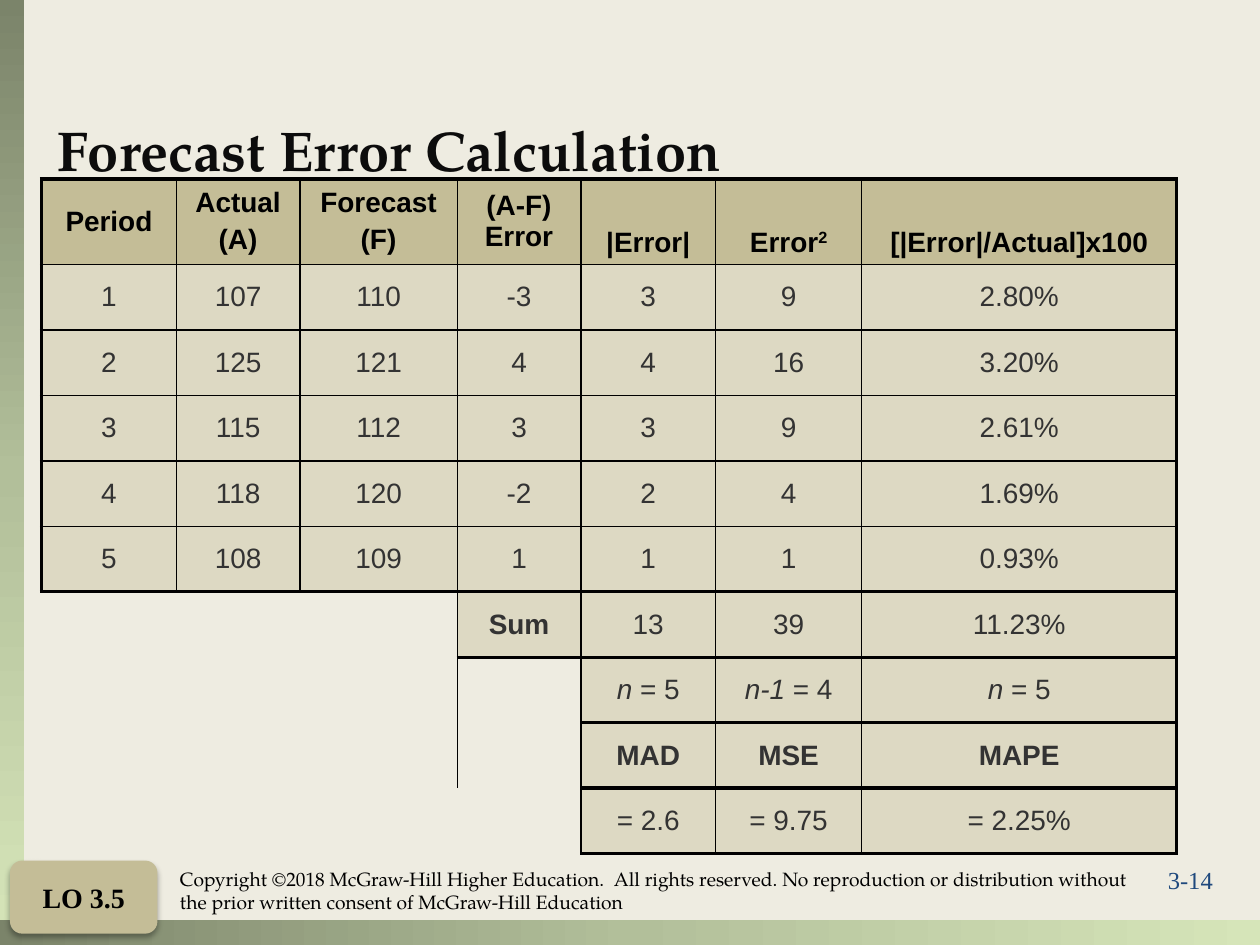
from dataclasses import dataclass

from lxml.etree import SubElement
from pptx import Presentation
from pptx.dml.color import RGBColor
from pptx.enum.shapes import MSO_SHAPE as Preset
from pptx.enum.text import MSO_ANCHOR as Anchor, PP_ALIGN as Align
from pptx.oxml.ns import qn
from pptx.util import Inches, Pt


@dataclass(frozen=True)
class Theme:
    """Colours, fonts and sizes of the slide."""
    background: str = "EEECE1"
    header: str = "C4BD97"
    body: str = "DDD9C3"
    black: str = "000000"
    value: str = "333333"
    title: str = "0C0C0C"
    number: str = "1F497D"
    gradient: tuple = ("7B846A", "B2BF9A", "D6E5B9")
    sans: str = "Arial"
    serif: str = "TeX Gyre Pagella"
    label: str = "Times New Roman"
    title_size: float = 32
    table_size: float = 16
    number_size: float = 14
    small_size: float = 11
    thin: float = 1
    thick: float = 2.25


@dataclass(frozen=True)
class Box:
    """Place of an element, in inches."""
    left: float
    top: float
    width: float
    height: float

    def lengths(self) -> tuple:
        """Return the place as lengths."""
        return tuple(Inches(n) for n in (self.left, self.top, self.width, self.height))


@dataclass(frozen=True)
class Style:
    """Look of a paragraph."""
    font: str
    size: float
    color: str
    bold: bool = False
    align: Align = Align.LEFT


@dataclass(frozen=True)
class Entry:
    """Table text with an optional italic lead and superscript tail."""
    text: str
    lead: str = ""
    tail: str = ""
    bold: bool = False


THEME = Theme()
TABLE_BOX = Box(0.33, 1.42, 9.01, 5.29)
COLUMN_WIDTHS = (1.07, 0.98, 1.25, 0.98, 1.07, 1.16, 2.5)
HEADER_HEIGHT, ROW_HEIGHT = 0.61, 0.52
SUM_ROW = 6
MERGES = (((6, 0), (8, 2)), ((7, 3), (9, 3)), ((9, 0), (9, 2)))
COUNT = Entry("= 5", lead="n ")
ROWS = (
    ("Period", "Actual\n(A)", "Forecast\n(F)", "(A-F) Error", "|Error|",
     Entry("Error", tail="2", bold=True), "[|Error|/Actual]x100"),
    ("1", "107", "110", "-3", "3", "9", "2.80%"),
    ("2", "125", "121", "4", "4", "16", "3.20%"),
    ("3", "115", "112", "3", "3", "9", "2.61%"),
    ("4", "118", "120", "-2", "2", "4", "1.69%"),
    ("5", "108", "109", "1", "1", "1", "0.93%"),
    (None, None, None, Entry("Sum", bold=True), "13", "39", "11.23%"),
    (None, None, None, None, COUNT, Entry("= 4", lead="n-1 "), COUNT),
    (None, None, None, None, *(Entry(name, bold=True) for name in ("MAD", "MSE", "MAPE"))),
    (None, None, None, None, "= 2.6", "= 9.75", "= 2.25%"),
)


def color(value: str) -> RGBColor:
    """Return a colour from its hexadecimal form."""
    return RGBColor.from_string(value)


def style_paragraph(paragraph, style: Style) -> None:
    """Apply a style to a paragraph."""
    paragraph.alignment = style.align
    font = paragraph.font
    font.name, font.size, font.bold = style.font, Pt(style.size), style.bold
    font.color.rgb = color(style.color)


def add_text(slide, box: Box, text: str, style: Style, anchor: Anchor = Anchor.TOP) -> None:
    """Add a wrapping text box."""
    frame = slide.shapes.add_textbox(*box.lengths()).text_frame
    frame.word_wrap, frame.vertical_anchor = True, anchor
    frame.text = text
    style_paragraph(frame.paragraphs[0], style)


def add_gradient_bar(slide, box: Box, degrees: int) -> None:
    """Add a borderless bar with the theme gradient, turned clockwise."""
    bar = slide.shapes.add_shape(Preset.RECTANGLE, *box.lengths())
    bar.shadow.inherit = False
    bar.line.fill.background()
    bar.fill.gradient()
    bar.fill.gradient_angle = (360 - degrees) % 360
    stops = bar._element.spPr.find(qn("a:gradFill")).find(qn("a:gsLst"))
    for stop in list(stops):
        stops.remove(stop)
    for index, value in enumerate(THEME.gradient):
        stop = SubElement(stops, qn("a:gs"), pos=str(index * 50000))
        SubElement(stop, qn("a:srgbClr"), val=value)


def add_objective(slide, box: Box, text: str) -> None:
    """Add the rounded learning objective label with a soft shadow."""
    label = slide.shapes.add_shape(Preset.ROUNDED_RECTANGLE, *box.lengths())
    label.shadow.inherit = False
    label.fill.solid()
    label.fill.fore_color.rgb = color(THEME.header)
    label.line.fill.background()
    label.text_frame.text = text
    label.text_frame.vertical_anchor = Anchor.MIDDLE
    style_paragraph(label.text_frame.paragraphs[0],
                    Style(THEME.label, THEME.table_size, THEME.black, True, Align.CENTER))
    shadow = SubElement(label._element.spPr.find(qn("a:effectLst")), qn("a:outerShdw"),
                        blurRad=str(Pt(3.5)), dist=str(Pt(2.2)), dir="5400000", rotWithShape="0")
    shade = SubElement(shadow, qn("a:srgbClr"), val=THEME.black)
    SubElement(shade, qn("a:alpha"), val="32000")


def border_widths(row: int, column: int) -> tuple:
    """Return left, right, top and bottom border widths of a cell, zero for none."""
    thin, thick = THEME.thin, THEME.thick
    last = len(COLUMN_WIDTHS) - 1
    if ROWS[row][column] is None:
        return (0, thin if ROWS[row][column + 1] is not None else 0,
                thick if ROWS[row - 1][column] is not None else 0, 0)
    return (thick if column == 0 else thin, thick if column == last else thin,
            thick if row == 0 or row >= SUM_ROW else thin,
            thick if row >= SUM_ROW - 1 else thin)


def set_borders(cell, widths: tuple) -> None:
    """Draw the four borders of a cell."""
    properties = cell._tc.get_or_add_tcPr()
    for index, (side, width) in enumerate(zip(("lnL", "lnR", "lnT", "lnB"), widths)):
        line = SubElement(properties, qn(f"a:{side}"), w=str(Pt(width)))
        properties.insert(index, line)
        if width:
            fill = SubElement(line, qn("a:solidFill"))
            SubElement(fill, qn("a:srgbClr"), val=THEME.black)
        else:
            SubElement(line, qn("a:noFill"))


def fill_cell(cell, entry: Entry, row: int, column: int) -> None:
    """Write and colour one table cell."""
    is_header = row == 0
    cell.fill.solid()
    cell.fill.fore_color.rgb = color(THEME.header if is_header else THEME.body)
    cell.margin_left = cell.margin_right = Inches(0.11)
    cell.vertical_anchor = Anchor.BOTTOM if is_header and column > 3 else Anchor.MIDDLE
    style = Style(THEME.sans, THEME.table_size, THEME.black if is_header else THEME.value,
                  entry.bold or is_header, Align.CENTER)
    for index, text in enumerate(entry.text.split("\n")):
        frame = cell.text_frame
        paragraph = frame.add_paragraph() if index else frame.paragraphs[0]
        if index:
            paragraph.space_before = Pt(3.2)
        style_paragraph(paragraph, style)
        if entry.lead:
            lead = paragraph.add_run()
            lead.text, lead.font.italic = entry.lead, True
        paragraph.add_run().text = text
        if entry.tail:
            tail = paragraph.add_run()
            tail.text = entry.tail
            tail._r.get_or_add_rPr().set("baseline", "30000")


def add_error_table(slide) -> None:
    """Add the stepped table of forecast errors."""
    table = slide.shapes.add_table(len(ROWS), len(COLUMN_WIDTHS), *TABLE_BOX.lengths()).table
    table.first_row = table.horz_banding = False
    for column, width in zip(table.columns, COLUMN_WIDTHS):
        column.width = Inches(width)
    for row, entries in enumerate(ROWS):
        table.rows[row].height = Inches(ROW_HEIGHT if row else HEADER_HEIGHT)
        for column, entry in enumerate(entries):
            cell = table.cell(row, column)
            if entry is None:
                cell.fill.background()
            else:
                fill_cell(cell, Entry(entry) if isinstance(entry, str) else entry, row, column)
            set_borders(cell, border_widths(row, column))
    for first, last in MERGES:
        table.cell(*first).merge(table.cell(*last))


def main() -> None:
    """Build and save the slide."""
    presentation = Presentation()
    presentation.slide_width, presentation.slide_height = Inches(10), Inches(7.5)
    slide = presentation.slides.add_slide(presentation.slide_layouts[6])
    slide.background.fill.solid()
    slide.background.fill.fore_color.rgb = color(THEME.background)
    add_text(slide, Box(9.17, 6.82, 0.65, 0.34), "3-14",
             Style(THEME.label, THEME.number_size, THEME.number))
    add_gradient_bar(slide, Box(0, 0, 0.19, 7.5), 90)
    add_gradient_bar(slide, Box(0, 7.3, 10, 0.2), 0)
    add_error_table(slide)
    add_text(slide, Box(0.36, 0.17, 9, 1.33), "Forecast Error Calculation",
             Style(THEME.serif, THEME.title_size, THEME.title, True), Anchor.BOTTOM)
    add_objective(slide, Box(0.08, 6.83, 1.17, 0.58), "LO 3.5")
    add_text(slide, Box(1.33, 6.83, 7.83, 0.88),
             "Copyright ©2018 McGraw-Hill Higher Education.  All rights reserved. No reproduction or "
             "distribution without the prior written consent of McGraw-Hill Education",
             Style(THEME.serif, THEME.small_size, THEME.black))
    presentation.save("out.pptx")


if __name__ == "__main__":
    main()
